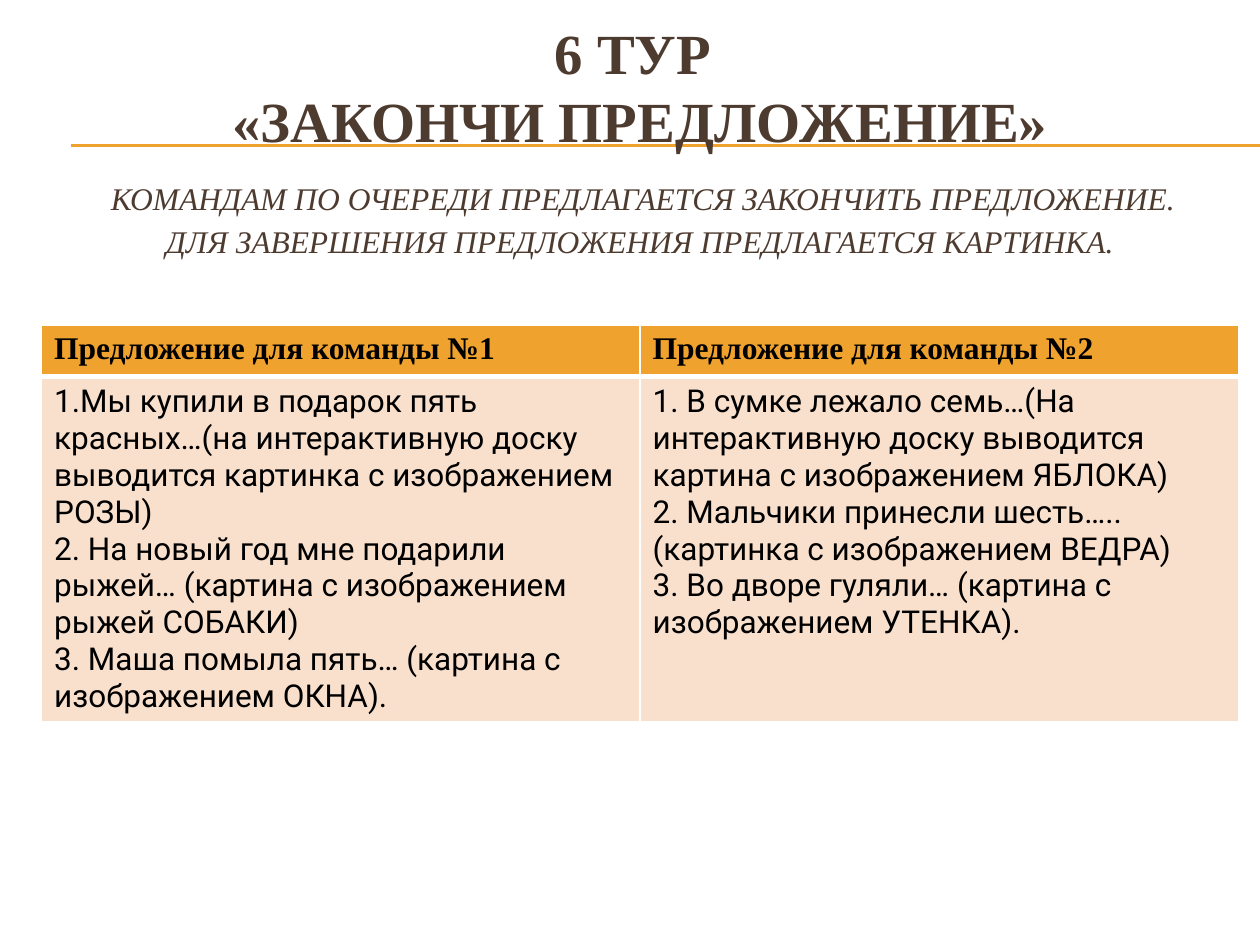
"""Builds the quiz slide for round 6, "Finish the sentence"."""
from copy import deepcopy
from lxml import etree
from pptx import Presentation
from pptx.dml.color import RGBColor
from pptx.enum.shapes import MSO_CONNECTOR
from pptx.enum.text import MSO_ANCHOR, MSO_AUTO_SIZE, PP_ALIGN
from pptx.oxml.ns import qn
from pptx.util import Inches, Pt

STRAIGHT = MSO_CONNECTOR.STRAIGHT
MIDDLE = MSO_ANCHOR.MIDDLE
NO_AUTOFIT = MSO_AUTO_SIZE.NONE
CENTER = PP_ALIGN.CENTER
COLORS = {"accent": "F0A22E", "title": "4E3B30", "text": "000000", "body": "F9E0CD", "border": "FFFFFF"}
SERIF, SANS = "Times New Roman", "Roboto"


def color(name):
    return RGBColor.from_string(COLORS[name])


def add_run(p, text, size, font, color_name, bold=False, italic=False):
    r = p.add_run()
    r.text = text
    r.font.size, r.font.name = Pt(size), font
    r.font.bold, r.font.italic = bold, italic
    r.font.color.rgb = color(color_name)


prs = Presentation()
prs.slide_width, prs.slide_height = Inches(10), Inches(7.5)
s = prs.slides.add_slide(prs.slide_layouts[5])

title = s.shapes.title
title.left, title.top = Inches(0.33), Inches(0.78)
title.width, title.height = Inches(9.5), Inches(0.64)
tf = title.text_frame
tf.word_wrap = True
tf.auto_size = NO_AUTOFIT
tf.vertical_anchor = MIDDLE
p = tf.paragraphs[0]
p.alignment = CENTER

heading = {"size": 32.4, "bold": True}
task = {"size": 18, "italic": True}
title_lines = [
    [("6 ТУР ", heading)],
    [("«ЗАКОНЧИ ПРЕДЛОЖЕНИЕ»", heading)],
    [(" ", heading), ("КОМАНДАМ ПО ОЧЕРЕДИ ПРЕДЛАГАЕТСЯ ЗАКОНЧИТЬ ПРЕДЛОЖЕНИЕ. ", task)],
    [("ДЛЯ ЗАВЕРШЕНИЯ ПРЕДЛОЖЕНИЯ ПРЕДЛАГАЕТСЯ КАРТИНКА.", task)],
]
for i, line in enumerate(title_lines):
    if i:
        p.add_line_break()
    for text, style in line:
        add_run(p, text, font=SERIF, color_name="title", **style)
for line_break in title.element.iter(qn("a:br")):
    run_before = line_break.getprevious()
    line_break.append(deepcopy(run_before.find(qn("a:rPr"))))

for y in (1.15, 1.16):
    rule = s.shapes.add_connector(STRAIGHT, Inches(0.56), Inches(y), Inches(10), Inches(y))
    rule.line.color.rgb = color("accent")
    rule.line.width = Pt(0.75)
    etree.SubElement(rule.element.spPr, qn("a:effectLst"))
    title.element.addprevious(rule.element)

teams = [
    ("Предложение для команды №1", [
        "1.Мы купили в подарок пять красных…(на интерактивную доску выводится картинка с изображением РОЗЫ)",
        "2. На новый год мне подарили рыжей… (картина с изображением рыжей СОБАКИ)",
        "3. Маша помыла пять… (картина с изображением ОКНА).",
    ]),
    ("Предложение для команды №2", [
        "1. В сумке лежало семь…(На интерактивную доску выводится картина с изображением ЯБЛОКА)",
        "2. Мальчики принесли шесть…..(картинка с изображением ВЕДРА)",
        "3. Во дворе гуляли… (картина с изображением УТЕНКА).",
    ]),
]
frame = s.shapes.add_table(2, len(teams), Inches(0.33), Inches(2.58), Inches(9.5), Inches(3.14))
table = frame.table
table.rows[0].height, table.rows[1].height = Inches(0.41), Inches(2.73)
for col, (header, sentences) in enumerate(teams):
    table.columns[col].width = Inches(4.75)
    rows = [([header], "accent", SERIF, True), (sentences, "body", SANS, False)]
    for row, (lines, fill, font, bold) in enumerate(rows):
        cell = table.cell(row, col)
        cell.fill.solid()
        cell.fill.fore_color.rgb = color(fill)
        tf = cell.text_frame
        for i, line in enumerate(lines):
            p = tf.add_paragraph() if i else tf.paragraphs[0]
            add_run(p, line, 18, font, "text", bold)

header_row = next(frame.element.iter(qn("a:tr")))
for cell_props in header_row.iter(qn("a:tcPr")):
    bottom = etree.Element(qn("a:lnB"), w=str(Pt(3)))
    fill = etree.SubElement(bottom, qn("a:solidFill"))
    etree.SubElement(fill, qn("a:srgbClr"), val=COLORS["border"])
    cell_props.insert(0, bottom)

prs.save("out.pptx")
